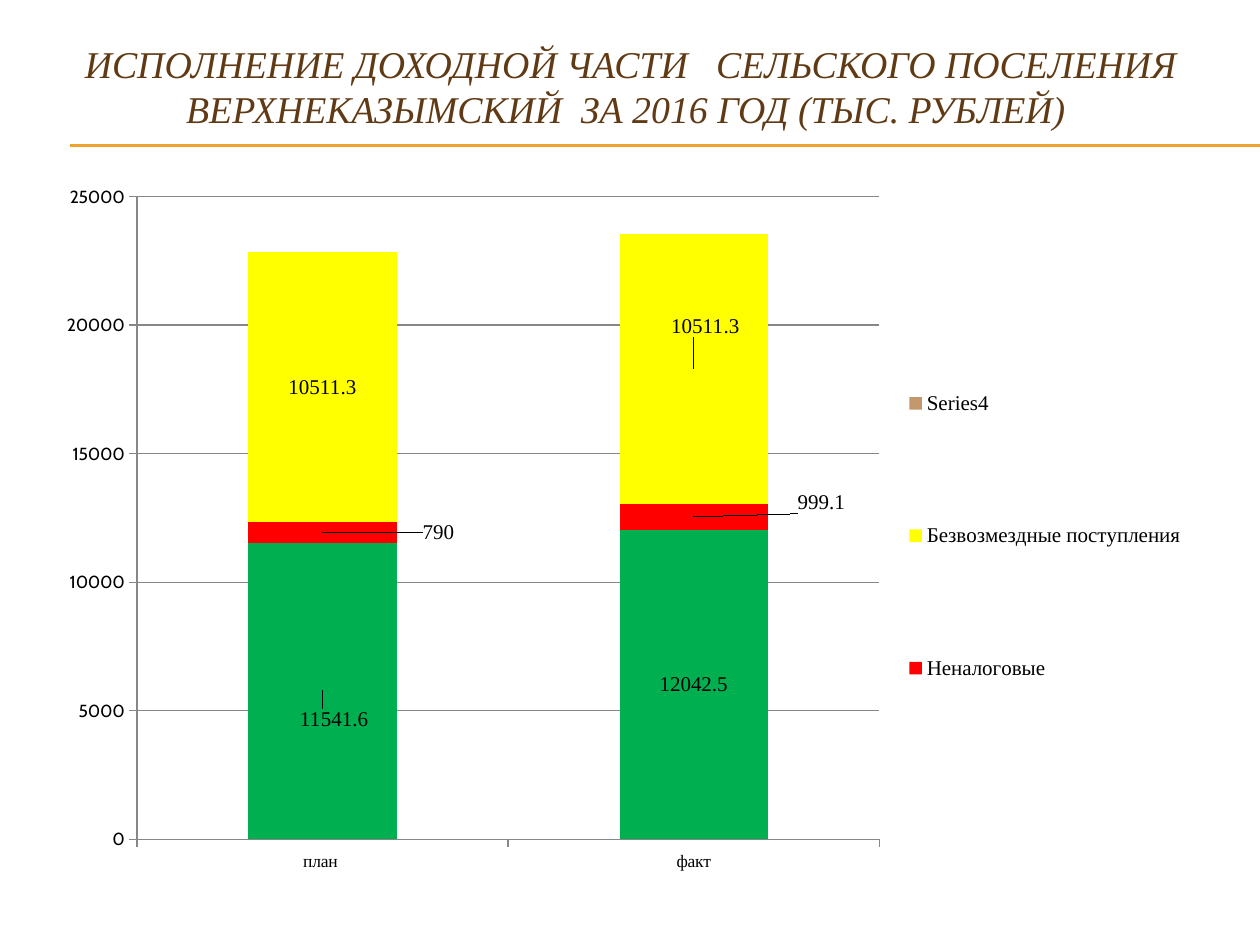
from dataclasses import dataclass

from lxml.etree import SubElement
from pptx import Presentation
from pptx.chart.data import CategoryChartData
from pptx.dml.color import RGBColor
from pptx.enum.chart import XL_CHART_TYPE as ChartType
from pptx.enum.chart import XL_LEGEND_POSITION as LegendPosition
from pptx.enum.chart import XL_TICK_MARK as TickMark
from pptx.enum.shapes import MSO_CONNECTOR as Connector
from pptx.enum.text import MSO_ANCHOR as Anchor
from pptx.enum.text import MSO_AUTO_SIZE as AutoSize
from pptx.enum.text import PP_ALIGN as Align
from pptx.oxml.ns import qn
from pptx.util import Pt


@dataclass(frozen=True)
class Theme:
    title: str = "603A14"
    rule: str = "F0A22E"
    text: str = "000000"
    grid: str = "878787"
    serif: str = "Times New Roman"
    sans: str = "Cabin"
    title_size: float = 21.6
    axis_size: float = 10
    label_size: float = 12


THEME = Theme()
TITLE = ("ИСПОЛНЕНИЕ ДОХОДНОЙ ЧАСТИ   СЕЛЬСКОГО ПОСЕЛЕНИЯ "
         "ВЕРХНЕКАЗЫМСКИЙ  ЗА 2016 ГОД (ТЫС. РУБЛЕЙ) ")
CATEGORIES = ("план ", "факт")
# Name, values, colour, label shifts as fractions of the chart
SERIES = (
    ("Series 1", (11541.6, 12042.5), "00B050", ((0.01, 0.04), (0, 0))),
    ("Неналоговые", (790, 999.1), "FF0000", ((0.1, 0), (0.11, -0.02))),
    ("Безвозмездные поступления ", (10511.3, 10511.3), "FFFF00",
     ((0, 0), (0.01, -0.06))),
    ("Series4", (None, None), "C3986D", ()),
)


def color(value):
    return RGBColor.from_string(value)


def style_font(font, name, size, fill=THEME.text):
    font.name = name
    font.size = Pt(size)
    font.color.rgb = color(fill)


def make_layout(parent, index, **settings):
    """Insert a manual chart layout as a child of parent."""
    layout = parent.makeelement(qn("c:layout"))
    manual = SubElement(layout, qn("c:manualLayout"))
    for tag, value in settings.items():
        SubElement(manual, qn(f"c:{tag}")).set("val", str(value))
    parent.insert(index, layout)


def add_title(slide):
    title = slide.shapes.title
    title.left, title.top = Pt(14.4), Pt(15.1)
    title.width, title.height = Pt(692), Pt(67.7)
    frame = title.text_frame
    frame.word_wrap = True
    frame.auto_size = AutoSize.NONE
    frame.vertical_anchor = Anchor.MIDDLE
    paragraph = frame.paragraphs[0]
    paragraph.alignment = Align.CENTER
    run = paragraph.add_run()
    run.text = TITLE
    style_font(run.font, THEME.serif, THEME.title_size, THEME.title)
    run.font.italic = True


def add_rule(slide, top):
    line = slide.shapes.add_connector(
        Connector.STRAIGHT, Pt(40.3), Pt(top), Pt(720), Pt(top))
    line.line.color.rgb = color(THEME.rule)
    line.line.width = Pt(0.75)
    SubElement(line._element.spPr, qn("a:effectLst"))


def style_axis(axis, font_name):
    axis.major_tick_mark = TickMark.OUTSIDE
    axis.minor_tick_mark = TickMark.NONE
    axis.format.line.color.rgb = color(THEME.grid)
    style_font(axis.tick_labels.font, font_name, THEME.axis_size)


def style_series(series, fill, shifts):
    series.format.fill.solid()
    series.format.fill.fore_color.rgb = color(fill)
    if not shifts:
        return
    labels = series.data_labels
    labels.show_value = True
    style_font(labels.font, THEME.serif, THEME.label_size)
    for index, (x, y) in enumerate(shifts):
        if x or y:
            label = series.points[index].data_label
            style_font(label.font, THEME.serif, THEME.label_size)
            element = labels._element.findall(qn("c:dLbl"))[-1]
            make_layout(element, 1, x=x, y=y)


def style_legend(chart):
    chart.has_legend = True
    legend = chart.legend
    legend.position = LegendPosition.RIGHT
    legend.include_in_layout = False
    style_font(legend.font, THEME.serif, THEME.label_size)
    element = legend._element
    for layout in element.findall(qn("c:layout")):
        element.remove(layout)
    # Leave the first series out of the legend
    entry = element.makeelement(qn("c:legendEntry"))
    SubElement(entry, qn("c:idx")).set("val", "0")
    SubElement(entry, qn("c:delete")).set("val", "1")
    element.insert(1, entry)
    make_layout(element, 2, xMode="edge", yMode="edge",
                x=0.74, y=0.15, w=0.25, h=0.71)


def add_income_chart(slide):
    data = CategoryChartData()
    data.categories = CATEGORIES
    for name, values, _, _ in SERIES:
        data.add_series(name, values)
    chart = slide.shapes.add_chart(
        ChartType.COLUMN_STACKED, Pt(25.2), Pt(100.1), Pt(663), Pt(408.2),
        data).chart
    chart.has_title = False
    style_font(chart.font, THEME.sans, THEME.axis_size)

    # Columns
    plot = chart.plots[0]
    plot.gap_width, plot.overlap = 150, 100
    plot.vary_by_categories = False
    for series, (_, _, fill, shifts) in zip(plot.series, SERIES):
        style_series(series, fill, shifts)

    # Axes
    style_axis(chart.category_axis, THEME.serif)
    value_axis = chart.value_axis
    style_axis(value_axis, THEME.sans)
    value_axis.minimum_scale, value_axis.maximum_scale = 0, 25000
    value_axis.major_unit = 5000
    value_axis.has_major_gridlines = True
    value_axis.major_gridlines.format.line.color.rgb = color(THEME.grid)

    # Plot area and legend
    area = chart._chartSpace.chart.plotArea
    for layout in area.findall(qn("c:layout")):
        area.remove(layout)
    make_layout(area, 0, layoutTarget="inner", xMode="edge", yMode="edge",
                x=0.08, y=0.03, w=0.64, h=0.9)
    style_legend(chart)


def main():
    presentation = Presentation()
    presentation.slide_width, presentation.slide_height = Pt(720), Pt(540)
    slide = presentation.slides.add_slide(presentation.slide_layouts[5])
    for top in (82.8, 83.5):
        add_rule(slide, top)
    add_title(slide)
    add_income_chart(slide)
    presentation.save("out.pptx")


if __name__ == "__main__":
    main()
